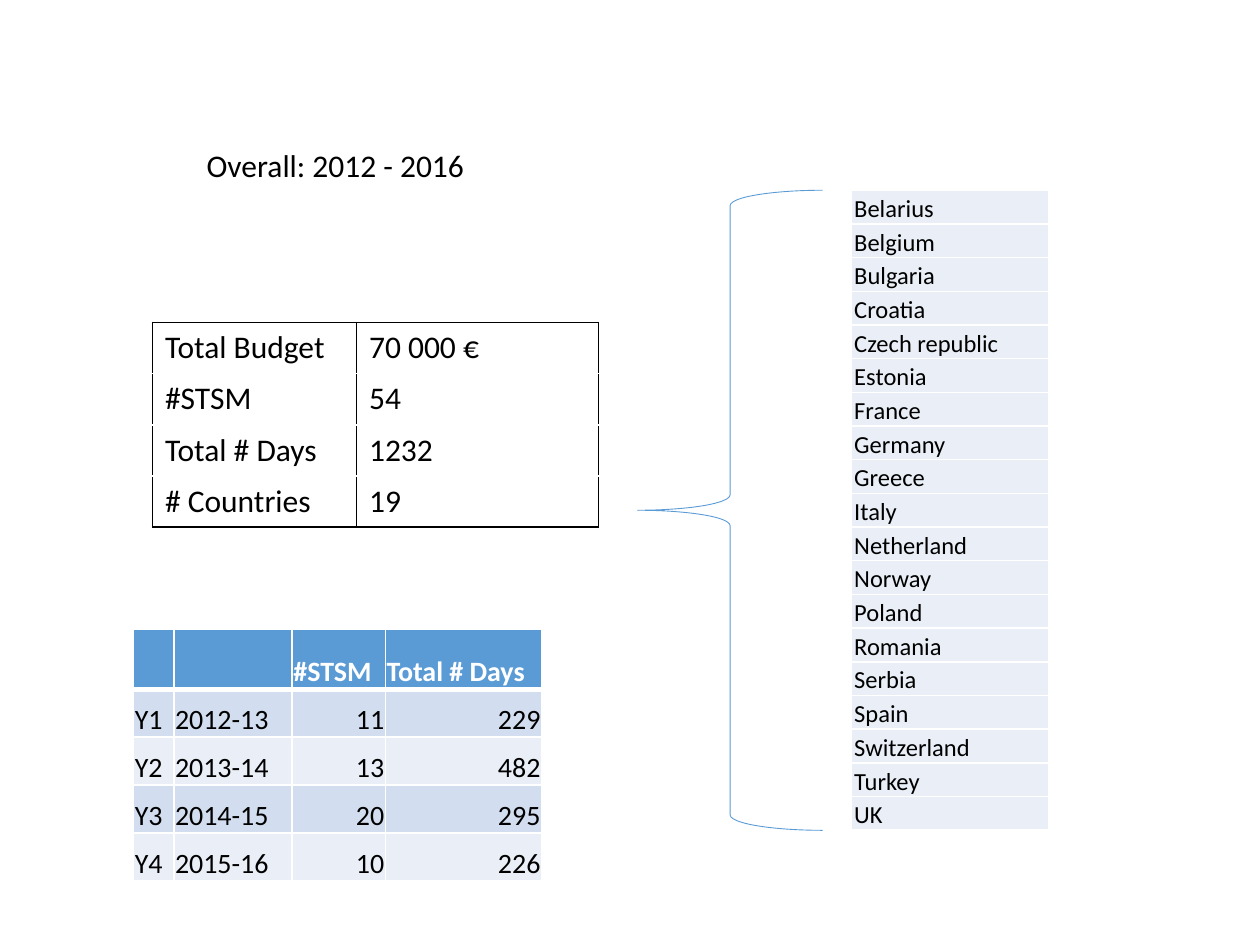
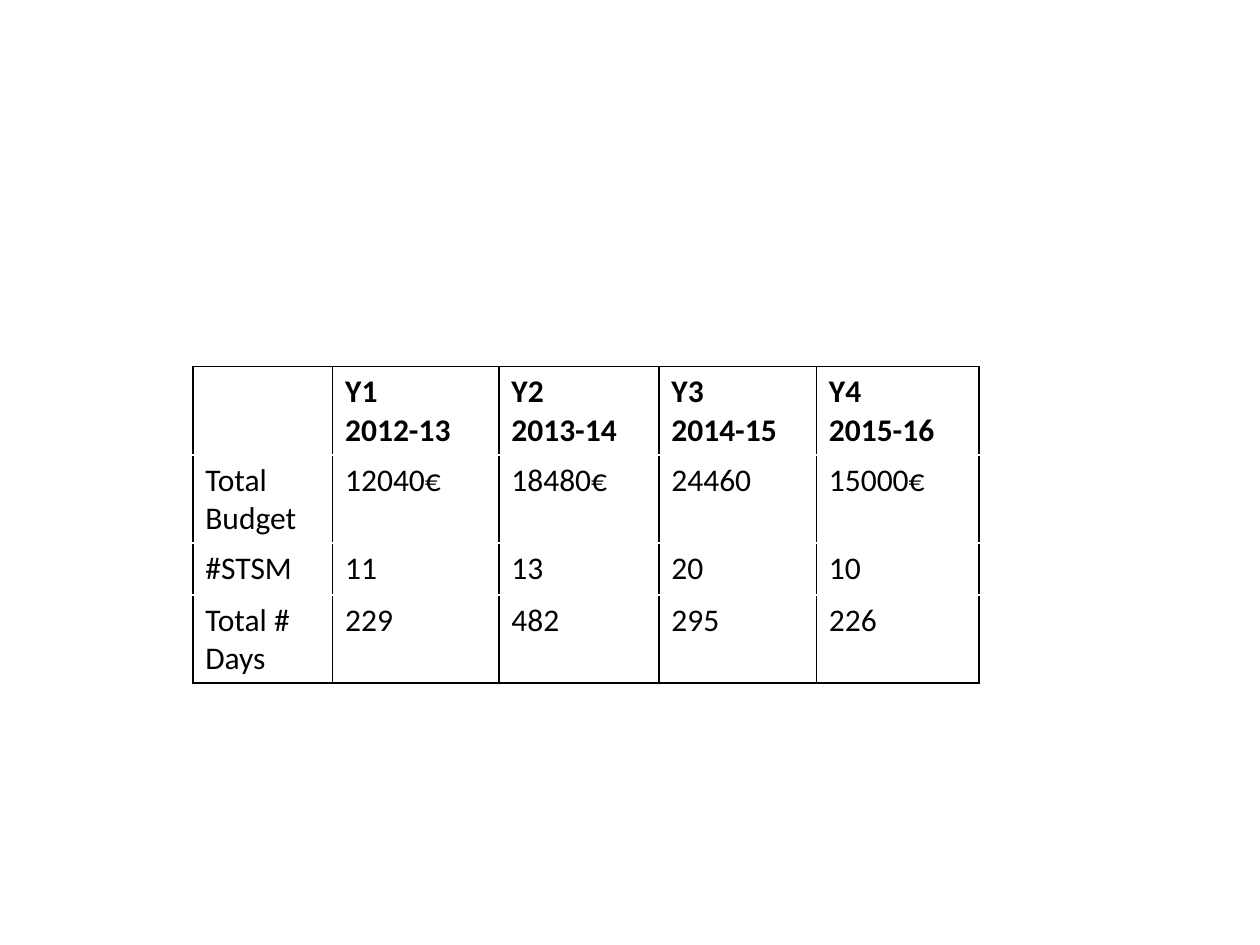
from dataclasses import dataclass

from lxml.etree import SubElement
from pptx import Presentation
from pptx.dml.color import RGBColor
from pptx.enum.shapes import MSO_SHAPE as Shape
from pptx.enum.text import MSO_ANCHOR as Anchor, MSO_AUTO_SIZE as AutoSize, PP_ALIGN as Align
from pptx.oxml.ns import qn
from pptx.slide import Slide
from pptx.table import _Cell as Cell
from pptx.util import Emu, Inches, Pt

SLIDE_WIDTH, SLIDE_HEIGHT = Inches(10), Inches(7.5)
GRID_COLUMNS, GRID_ROWS = 100, 75
TITLE_ONLY, BLANK = 5, 6
FONT = "Calibri"
COLORS = {
    "black": "000000",
    "white": "FFFFFF",
    "accent": "5B9BD5",
    "band_dark": "D2DEEF",
    "band_light": "EAEFF7",
}


@dataclass(frozen=True)
class TableStyle:
    size: int
    border: str
    bands: tuple[str, ...] = ()
    header_fill: str | None = None
    header_text: str = "black"
    header_bold: bool = False
    header_rule: float = 1
    margins: tuple[float, float, float, float] = (0.1, 0.05, 0.1, 0.05)
    anchor: Anchor = Anchor.TOP
    right_from: int | None = None


@dataclass(frozen=True)
class TableSpec:
    left: float
    top: float
    columns: tuple[float, ...]
    rows: tuple[float, ...]
    values: list[tuple[str, ...]]
    style: TableStyle


PLAIN = TableStyle(18, "black")
PLAIN_HEADED = TableStyle(18, "black", header_bold=True)
COUNTRY_LIST = TableStyle(14, "white", bands=("band_light",),
                          margins=(0.02, 0.02, 0.02, 0), anchor=Anchor.BOTTOM)
BANDED = TableStyle(16, "white", bands=("band_dark", "band_light"),
                    header_fill="accent", header_text="white", header_bold=True,
                    header_rule=3, margins=(0.01, 0.01, 0.01, 0),
                    anchor=Anchor.BOTTOM, right_from=2)

COUNTRIES = [
    "Belarius", "Belgium", "Bulgaria", "Croatia", "Czech republic", "Estonia",
    "France", "Germany", "Greece", "Italy", "Netherland", "Norway", "Poland",
    "Romania", "Serbia", "Spain", "Switzerland", "Turkey", "UK",
]
YEARS = [
    ("Y1", "2012-13", "12040€", "11", "229"),
    ("Y2", "2013-14", "18480€", "13", "482"),
    ("Y3", "2014-15", "24460", "20", "295"),
    ("Y4", "2015-16", "15000€", "10", "226"),
]
LIST_TOP, LIST_HEIGHT = 15.1, 50.8


def across(columns: float) -> Emu:
    return Emu(round(SLIDE_WIDTH * columns / GRID_COLUMNS))


def down(rows: float) -> Emu:
    return Emu(round(SLIDE_HEIGHT * rows / GRID_ROWS))


def rgb(name: str) -> RGBColor:
    return RGBColor.from_string(COLORS[name])


def set_borders(cell: Cell, color: str, widths: dict[str, float]) -> None:
    properties = cell._tc.get_or_add_tcPr()
    for index, (side, width) in enumerate(widths.items()):
        line = SubElement(properties, qn(f"a:ln{side}"), w=str(Pt(width)))
        fill = SubElement(line, qn("a:solidFill"))
        SubElement(fill, qn("a:srgbClr"), val=COLORS[color])
        properties.insert(index, line)


def format_cell(cell: Cell, text: str, row: int, column: int, style: TableStyle) -> None:
    is_header = row == 0
    cell.text = text
    cell.vertical_anchor = style.anchor
    (cell.margin_left, cell.margin_top,
     cell.margin_right, cell.margin_bottom) = map(Inches, style.margins)
    fill = style.bands[(row - 1) % len(style.bands)] if style.bands else None
    if is_header and style.header_fill:
        fill = style.header_fill
    if fill:
        cell.fill.solid()
        cell.fill.fore_color.rgb = rgb(fill)
    else:
        cell.fill.background()
    widths = {"L": 1, "R": 1}
    if is_header:
        widths["T"] = 1
    widths["B"] = style.header_rule if is_header else 1
    set_borders(cell, style.border, widths)
    aligned_right = style.right_from is not None and column >= style.right_from
    for para in cell.text_frame.paragraphs:
        para.alignment = Align.RIGHT if aligned_right and not is_header else Align.LEFT
        para.font.name = FONT
        para.font.size = Pt(style.size)
        para.font.bold = is_header and style.header_bold
        para.font.color.rgb = rgb(style.header_text if is_header else "black")


def draw_table(page: Slide, spec: TableSpec) -> None:
    table = page.shapes.add_table(
        len(spec.rows), len(spec.columns), across(spec.left), down(spec.top),
        across(sum(spec.columns)), down(sum(spec.rows))).table
    table.first_row = table.horz_banding = False
    for column, width in zip(table.columns, spec.columns):
        column.width = across(width)
    for row, height in zip(table.rows, spec.rows):
        row.height = down(height)
    for row_index, values in enumerate(spec.values):
        for column_index, text in enumerate(values):
            format_cell(table.cell(row_index, column_index), text,
                        row_index, column_index, spec.style)


def draw_title(page: Slide, text: str) -> None:
    title = page.shapes.title
    title.left, title.top = across(15.4), down(11.1)
    title.width, title.height = across(22.7), down(4)
    frame = title.text_frame
    frame.text = text
    frame.word_wrap = False
    frame.auto_size = AutoSize.SHAPE_TO_FIT_TEXT
    frame.vertical_anchor = Anchor.TOP
    para = frame.paragraphs[0]
    para.alignment = Align.LEFT
    para.font.name = FONT
    para.font.size = Pt(18)
    para.font.color.rgb = rgb("black")


def draw_brace(page: Slide) -> None:
    brace = page.shapes.add_shape(Shape.LEFT_BRACE, across(50.6), down(LIST_TOP),
                                  across(14.7), down(LIST_HEIGHT))
    brace.shadow.inherit = False
    brace.fill.background()
    brace.line.color.rgb = rgb("accent")
    brace.line.width = Pt(0.5)


def build_overall(deck: Presentation) -> None:
    page = deck.slides.add_slide(deck.slide_layouts[TITLE_ONLY])
    draw_title(page, "Overall: 2012 - 2016")
    totals = [("Total Budget", "70 000 €"), ("#STSM", "54"),
              ("Total # Days", "1232"), ("# Countries", str(len(COUNTRIES)))]
    draw_table(page, TableSpec(12.1, 25.6, (16.2, 19.2), (4.06,) * len(totals),
                               totals, PLAIN))
    count = len(COUNTRIES)
    draw_table(page, TableSpec(67.6, LIST_TOP, (15.6,), (LIST_HEIGHT / count,) * count,
                               [(country,) for country in COUNTRIES], COUNTRY_LIST))
    draw_brace(page)
    yearly = [("", "", "#STSM", "Total # Days")]
    yearly += [(year, period, visits, days) for year, period, _, visits, days in YEARS]
    draw_table(page, TableSpec(10.6, 49.9, (3.2, 9.4, 7.4, 12.4),
                               (4.8,) + (3.8,) * len(YEARS), yearly, BANDED))


def build_by_year(deck: Presentation) -> None:
    page = deck.slides.add_slide(deck.slide_layouts[BLANK])
    years, periods, *measures = zip(*YEARS)
    headings = [f"{year}\n{period}" for year, period in zip(years, periods)]
    labels = ("Total Budget", "#STSM", "Total # Days")
    values = [("", *headings)]
    values += [(label, *measure) for label, measure in zip(labels, measures)]
    draw_table(page, TableSpec(15.3, 29.1, (11.1, 13.2, 12.7, 12.5, 12.9),
                               (7, 7, 4.1, 7), values, PLAIN_HEADED))


def main() -> None:
    deck = Presentation()
    deck.slide_width, deck.slide_height = SLIDE_WIDTH, SLIDE_HEIGHT
    build_overall(deck)
    build_by_year(deck)
    deck.save("out.pptx")


if __name__ == "__main__":
    main()
